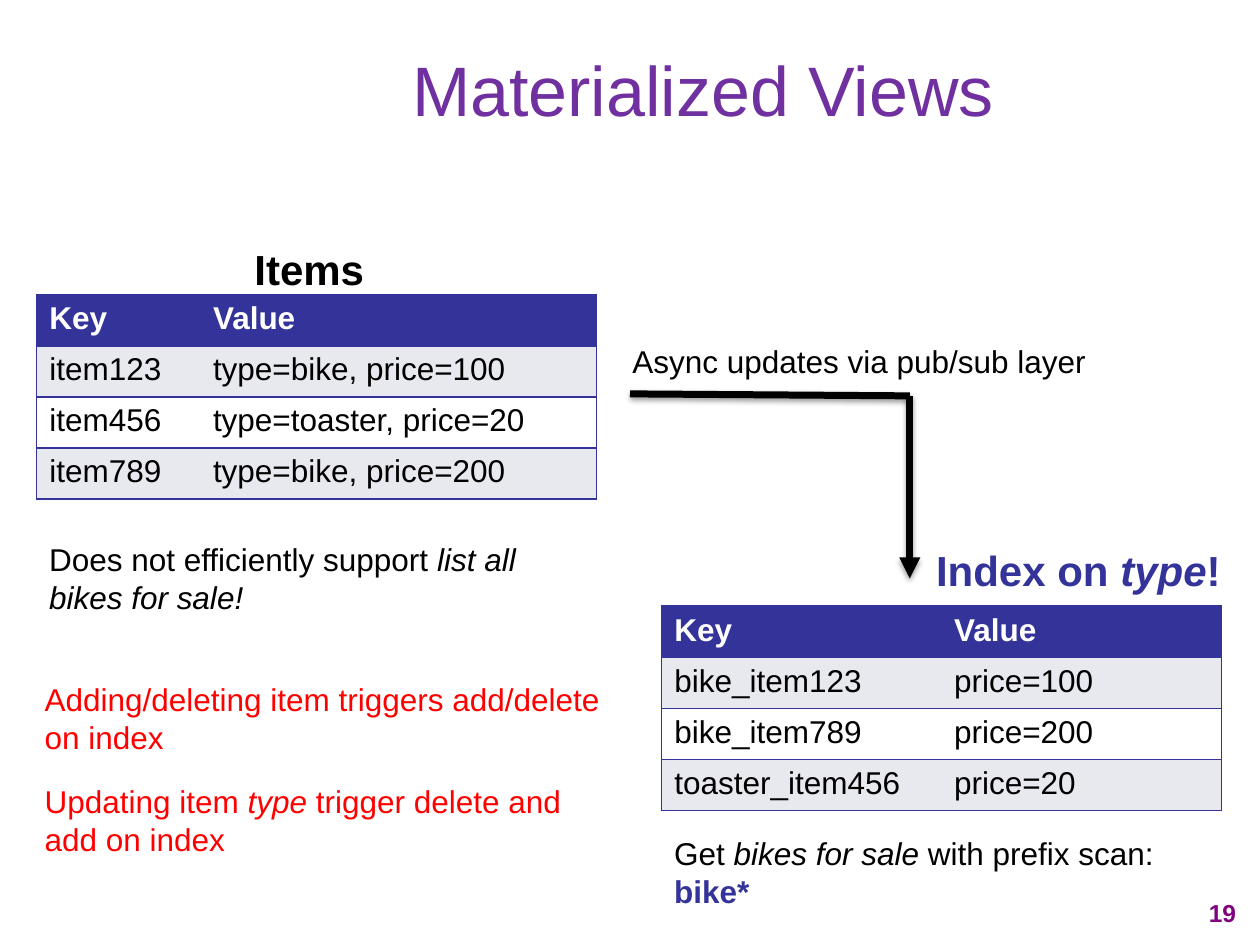
from lxml.etree import SubElement
from pptx import Presentation
from pptx.dml.color import RGBColor
from pptx.enum.shapes import MSO_CONNECTOR
from pptx.enum.text import MSO_ANCHOR, PP_ALIGN
from pptx.oxml.ns import qn
from pptx.util import Cm, Pt

COLORS = {
    "title": "7030A0",
    "page": "800080",
    "accent": "333399",
    "band": "E8E8EF",
    "white": "FFFFFF",
    "text": "000000",
    "alert": "FF0000",
}
BODY = {"name": "Arial", "size": Pt(18), "bold": False, "italic": False}
HEADING = {"size": Pt(24), "bold": True}
ITALIC = {"italic": True}
ROW_HEIGHT = 1.03


def color(key):
    return RGBColor.from_string(COLORS[key])


def add_runs(paragraph, runs, color_key, base):
    for text, changes in runs:
        run = paragraph.add_run()
        run.text = text
        values = {**BODY, **base, **changes}
        run.font.color.rgb = color(values.pop("color", color_key))
        for attribute, value in values.items():
            setattr(run.font, attribute, value)


def add_text(slide, place, runs, color_key="text", base={}, wrap=True,
             align=PP_ALIGN.LEFT, anchor=MSO_ANCHOR.TOP):
    frame = slide.shapes.add_textbox(*map(Cm, place)).text_frame
    for attribute, value in {"word_wrap": wrap, "vertical_anchor": anchor}.items():
        setattr(frame, attribute, value)
    paragraph = frame.paragraphs[0]
    paragraph.alignment = align
    add_runs(paragraph, runs, color_key, base)


def set_borders(cell, visible_sides):
    properties = cell._tc.get_or_add_tcPr()
    for side in "LRTB":
        border = SubElement(properties, qn(f"a:ln{side}"), w=str(Pt(1)))
        if side in visible_sides:
            fill = SubElement(border, qn("a:solidFill"))
            SubElement(fill, qn("a:srgbClr"), val=COLORS["accent"])
        else:
            SubElement(border, qn("a:noFill"))


def add_key_value_table(slide, left, top, widths, records):
    rows = [("Key", "Value"), *records]
    table = slide.shapes.add_table(
        len(rows), len(widths), Cm(left), Cm(top),
        Cm(sum(widths)), Cm(ROW_HEIGHT * len(rows))).table
    for column, width in zip(table.columns, widths):
        column.width = Cm(width)
    for r, record in enumerate(rows):
        table.rows[r].height = Cm(ROW_HEIGHT)
        header = r == 0
        fill_key = "accent" if header else ("band" if r % 2 else "white")
        for c, value in enumerate(record):
            cell = table.cell(r, c)
            set_borders(cell, "TBR" if c else "TBL")
            cell.fill.solid()
            cell.fill.fore_color.rgb = color(fill_key)
            add_runs(cell.text_frame.paragraphs[0], [(value, {})],
                     "white" if header else "text", {"bold": header})


def add_update_line(slide, start, end, arrow=False):
    connector = slide.shapes.add_connector(
        MSO_CONNECTOR.STRAIGHT, *map(Cm, (*start, *end)))
    connector.line.width = Pt(4)
    connector.line.color.rgb = color("text")
    if arrow:
        SubElement(connector.line._get_or_add_ln(), qn("a:tailEnd"), type="triangle")
    effects = SubElement(connector._element.spPr, qn("a:effectLst"))
    shadow = SubElement(effects, qn("a:outerShdw"), blurRad=str(Pt(3.1)),
                        dist=str(Pt(1.6)), dir="5400000", rotWithShape="0")
    shade = SubElement(shadow, qn("a:srgbClr"), val=COLORS["text"])
    SubElement(shade, qn("a:alpha"), val="38000")


def main():
    deck = Presentation()
    deck.slide_width, deck.slide_height = Cm(25.4), Cm(19.05)
    slide = deck.slides.add_slide(deck.slide_layouts[6])

    add_text(slide, (23.7, 17.98, 1.47, 0.84), [("19", {})], "page",
             {"size": Pt(14), "bold": True}, align=PP_ALIGN.RIGHT)
    add_text(slide, (2.74, 0.2, 22.86, 3.18), [("Materialized Views", {})], "title",
             {"size": Pt(40)}, align=PP_ALIGN.CENTER, anchor=MSO_ANCHOR.MIDDLE)

    add_key_value_table(slide, 0.74, 5.94, (3.3, 7.98), [
        ("item123", "type=bike, price=100"),
        ("item456", "type=toaster, price=20"),
        ("item789", "type=bike, price=200"),
    ])
    add_text(slide, (0.74, 10.77, 11.28, 1.8), [
        ("Does not efficiently support ", {}), ("list all bikes for sale!", ITALIC)])
    add_key_value_table(slide, 13.34, 12.22, (5.64, 5.64), [
        ("bike_item123", "price=100"),
        ("bike_item789", "price=200"),
        ("toaster_item456", "price=20"),
    ])

    corner = (18.34, 7.98)
    add_update_line(slide, (12.7, 7.94), corner)
    add_update_line(slide, corner, (18.34, 11.66), arrow=True)
    add_text(slide, (12.5, 6.78, 9.78, 1.02),
             [("Async updates via pub/sub layer", {})], wrap=False)

    add_text(slide, (0.65, 13.59, 12.01, 1.8),
             [("Adding/deleting item triggers add/delete on index", {})], "alert")
    add_text(slide, (0.65, 15.65, 12.01, 1.8), [
        ("Updating item ", {}), ("type", ITALIC),
        (" trigger delete and add on index", {})], "alert")
    add_text(slide, (13.34, 16.69, 11.28, 1.8), [
        ("Get ", {}), ("bikes for sale", ITALIC), (" with prefix scan: ", {}),
        ("bike*", {"color": "accent", "bold": True})])
    add_text(slide, (18.62, 10.85, 6.3, 1.27), [
        ("Index on ", {}), ("type", ITALIC), ("!", {})], "accent", HEADING, wrap=False)
    add_text(slide, (4.88, 4.78, 2.74, 1.27), [("Items", {})], base=HEADING, wrap=False)

    deck.save("out.pptx")


if __name__ == "__main__":
    main()
